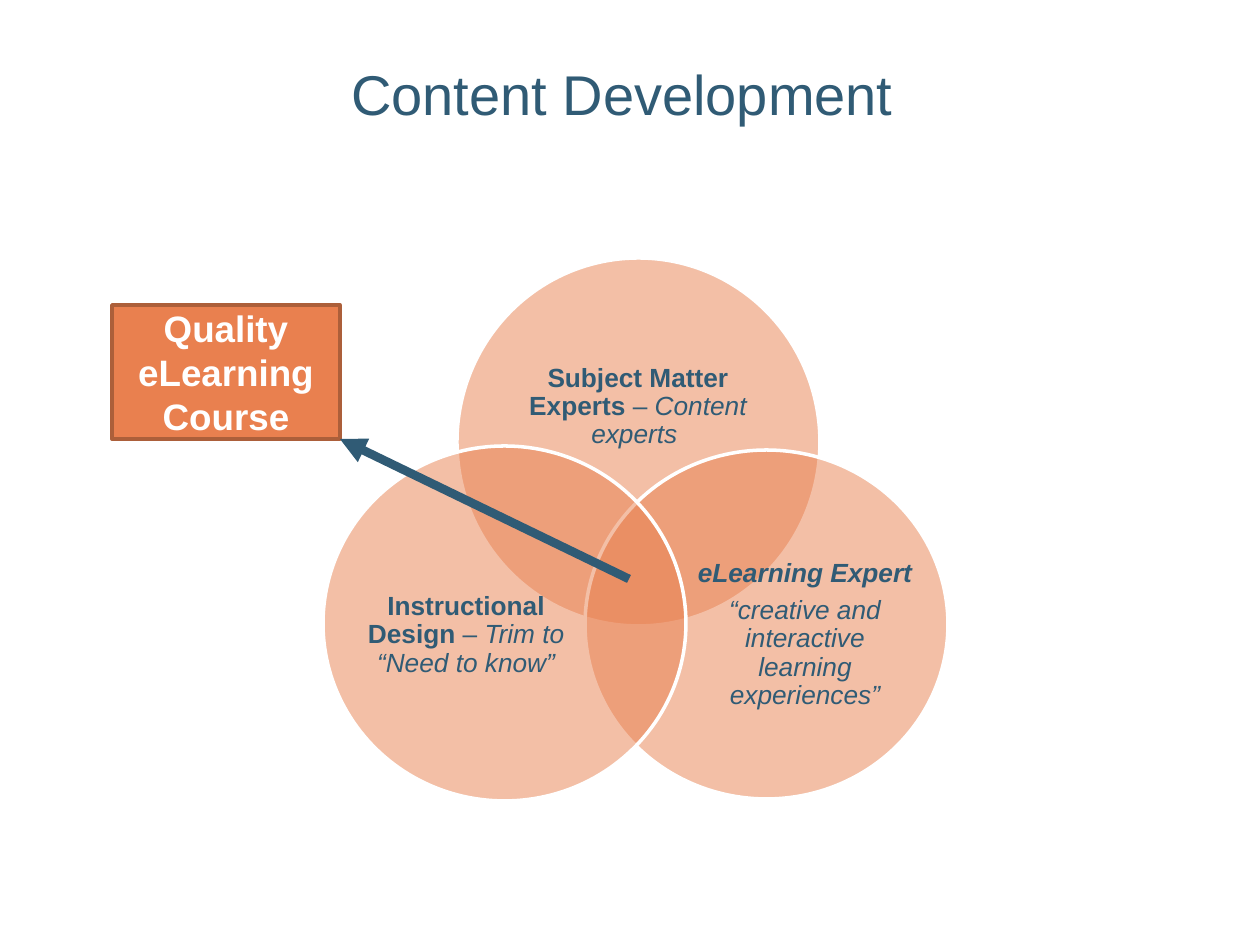
from dataclasses import dataclass

from lxml import etree
from pptx import Presentation
from pptx.dml.color import RGBColor
from pptx.enum.shapes import MSO_CONNECTOR, MSO_SHAPE
from pptx.enum.text import MSO_ANCHOR, PP_ALIGN
from pptx.oxml.ns import qn
from pptx.util import Emu, Pt

OVAL, RECTANGLE = MSO_SHAPE.OVAL, MSO_SHAPE.RECTANGLE
STRAIGHT = MSO_CONNECTOR.STRAIGHT
TOP, MIDDLE = MSO_ANCHOR.TOP, MSO_ANCHOR.MIDDLE
CENTER = PP_ALIGN.CENTER
EMU_PER_PX = 914400 // 126


@dataclass(frozen=True)
class Theme:
    font: str = "Arial"
    ink: RGBColor = RGBColor(0x30, 0x5B, 0x75)
    accent: RGBColor = RGBColor(0xE9, 0x80, 0x4F)
    accent_edge: RGBColor = RGBColor(0xAC, 0x5F, 0x3A)
    white: RGBColor = RGBColor(0xFF, 0xFF, 0xFF)
    title_size: int = 32
    outcome_size: int = 21
    label_size: int = 15
    edge_width: int = 2
    arrow_width: int = 5


THEME = Theme()

# Each role: circle box, label box, paragraphs of (text, bold, italic) runs
ROLES = [
    ((457, 258, 363, 368), (505, 324, 266, 166),
     [[("Subject Matter Experts ", True, False), ("– ", False, False),
       ("Content experts ", False, True)]]),
    ((585, 450, 363, 349), (696, 539, 218, 192),
     [[("eLearning Expert ", True, True)],
      [("“creative and interactive learning experiences”", False, True)]]),
    ((323, 446, 363, 355), (357, 538, 218, 195),
     [[("Instructional Design ", True, False), ("– ", False, False),
       ("Trim to “Need to know”", False, True)]]),
]


def px(*lengths):
    return [Emu(length * EMU_PER_PX) for length in lengths]


def style_paragraph(paragraph, size, color):
    paragraph.alignment = CENTER
    font = paragraph.font
    font.name, font.size, font.color.rgb = THEME.font, Pt(size), color


def add_panel(slide, preset, box, edge, alpha=None):
    panel = slide.shapes.add_shape(preset, *px(*box))
    panel.shadow.inherit = False
    panel.fill.solid()
    panel.fill.fore_color.rgb = THEME.accent
    panel.line.color.rgb = edge
    panel.line.width = Pt(THEME.edge_width)
    if alpha is not None:
        color = panel.fill._xPr.find(qn("a:solidFill"))[0]
        etree.SubElement(color, qn("a:alpha"), val=str(alpha * 1000))
    return panel


def add_text_frame(slide, box, anchor):
    frame = slide.shapes.add_textbox(*px(*box)).text_frame
    frame.word_wrap = True
    frame.vertical_anchor = anchor
    return frame


def add_title(slide, text):
    frame = add_text_frame(slide, (63, 53, 1134, 126), TOP)
    frame.text = text
    style_paragraph(frame.paragraphs[0], THEME.title_size, THEME.ink)


def add_role(slide, circle_box, label_box, paragraphs):
    add_panel(slide, OVAL, circle_box, THEME.white, alpha=50)
    frame = add_text_frame(slide, label_box, MIDDLE)
    frame.margin_left = frame.margin_right = 0
    frame.margin_top = frame.margin_bottom = 0
    for index, runs in enumerate(paragraphs):
        paragraph = frame.add_paragraph() if index else frame.paragraphs[0]
        style_paragraph(paragraph, THEME.label_size, THEME.ink)
        paragraph.line_spacing = 0.9
        paragraph.space_after = Pt(5)
        for text, bold, italic in runs:
            run = paragraph.add_run()
            run.text = text
            run.font.bold, run.font.italic = bold, italic


def add_outcome(slide, text):
    outcome = add_panel(slide, RECTANGLE, (112, 305, 228, 134), THEME.accent_edge)
    frame = outcome.text_frame
    frame.word_wrap = True
    frame.vertical_anchor = MIDDLE
    frame.text = text
    style_paragraph(frame.paragraphs[0], THEME.outcome_size, THEME.white)
    frame.paragraphs[0].font.bold = True


def add_arrow(slide, start, end):
    arrow = slide.shapes.add_connector(STRAIGHT, *px(*start, *end))
    arrow.line.color.rgb = THEME.ink
    arrow.line.width = Pt(THEME.arrow_width)
    etree.SubElement(arrow.line._get_or_add_ln(), qn("a:tailEnd"), type="triangle")
    etree.SubElement(arrow._element.spPr, qn("a:effectLst"))


def main():
    deck = Presentation()
    deck.slide_width, deck.slide_height = px(1260, 945)
    slide = deck.slides.add_slide(deck.slide_layouts[6])

    # Overlapping roles
    for role in ROLES:
        add_role(slide, *role)

    # Outcome, pointed to from the shared centre
    add_outcome(slide, "Quality eLearning Course")
    add_arrow(slide, (629, 579), (340, 439))

    add_title(slide, "Content Development ")
    deck.save("out.pptx")


if __name__ == "__main__":
    main()
